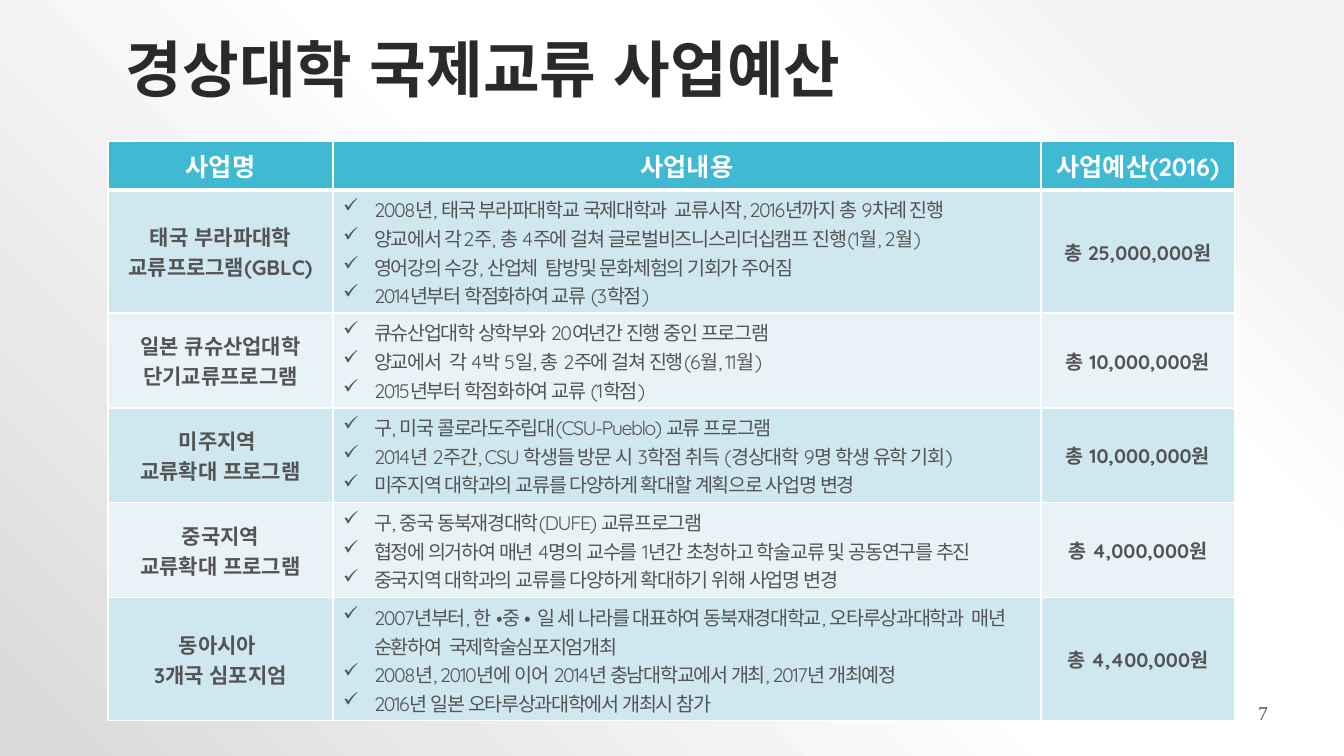
from lxml import etree
from pptx import Presentation
from pptx import util as u
from pptx.dml.color import RGBColor
from pptx.enum import text
from pptx.oxml import parse_xml
from pptx.oxml.ns import nsdecls, qn

TITLE = "경상대학 국제교류 사업예산"
PAGE_NUMBER = "7"
HEADERS = ["사업명", "사업내용", "사업예산(2016)"]
# name lines, detail lines (a tuple is one line in several spans), budget
PROGRAMS = [
    (["태국 부라파대학", "교류프로그램(GBLC)"],
     ["2008년, 태국 부라파대학교 국제대학과  교류시작, 2016년까지 총 9차례 진행",
      "양교에서 각2주, 총 4주에 걸쳐 글로벌비즈니스리더십캠프 진행(1월, 2월)",
      "영어강의 수강, 산업체  탐방및 문화체험의 기회가 주어짐",
      "2014년부터 학점화하여 교류 (3학점)"],
     "총 25,000,000원"),
    (["일본 큐슈산업대학", "단기교류프로그램"],
     ["큐슈산업대학 상학부와 20여년간 진행 중인 프로그램",
      "양교에서  각 4박 5일, 총 2주에 걸쳐 진행(6월, 11월)",
      "2015년부터 학점화하여 교류 (1학점)"],
     "총 10,000,000원"),
    (["미주지역 ", "교류확대 프로그램"],
     ["구, 미국 콜로라도주립대(CSU-Pueblo) 교류 프로그램",
      "2014년 2주간, CSU 학생들 방문 시 3학점 취득 (경상대학 9명 학생 유학 기회)",
      "미주지역 대학과의 교류를 다양하게 확대할 계획으로 사업명 변경"],
     "총 10,000,000원"),
    (["중국지역", "교류확대 프로그램"],
     ["구, 중국 동북재경대학(DUFE) 교류프로그램",
      "협정에 의거하여 매년 4명의 교수를 1년간 초청하고 학술교류 및 공동연구를 추진",
      "중국지역 대학과의 교류를 다양하게 확대하기 위해 사업명 변경"],
     "총 4,000,000원"),
    (["동아시아 ", "3개국 심포지엄"],
     [("2007년부터, 한 ", "•", "중 ", "• ",
       "일 세 나라를 대표하여 동북재경대학교, 오타루상과대학과  매년 순환하여  국제학술심포지엄개최"),
      "2008년, 2010년에 이어 2014년 충남대학교에서 개최, 2017년 개최예정",
      "2016년 일본 오타루상과대학에서 개최시 참가"],
     "총 4,400,000원"),
]

THEME = {
    "korean": "Noto Sans CJK KR", "latin": "Quicksand", "serif": "Times New Roman",
    "title": "2A2A2A", "ink": "545454", "white": "FFFFFF",
    "header": "40BAD2", "bands": ["CFE7EE", "E8F3F7"],
    "backdrop": [(10, "F2F2F2"), (28, "FFFFFF"), (48, "FFFFFF"), (100, "D9D9D9")],
    "title_size": 44, "header_size": 18, "name_size": 15, "body_size": 14,
}

PX = 914400 / 100.8
TITLE_BOX = (116, 0, 1076, 146)
NUMBER_BOX = (1068, 696, 210, 50)
TABLE_LEFT, TABLE_TOP = 108, 141
COLUMNS = [225, 708, 194]
ROWS = [49, 123, 95, 95, 95, 123]
INDENT = 31


def px(length):
    return u.Emu(round(length * PX))


def write(frame, lines, size, color, font=THEME["latin"], bold=False,
          align=text.PP_ALIGN.LEFT, spacing=None, tracking=0, check=False):
    """Fill a text frame, one paragraph a line; tracking is in points."""
    for index, line in enumerate(lines):
        para = frame.paragraphs[0] if index == 0 else frame.add_paragraph()
        para.alignment = align
        if spacing:
            para.line_spacing = spacing
        if check:
            props = para._p.get_or_add_pPr()
            props.set("marL", str(px(INDENT)))
            props.set("indent", str(-px(INDENT)))
            etree.SubElement(props, qn("a:buChar")).set("char", "✓")
        for part in (line if isinstance(line, tuple) else (line,)):
            dot = part.startswith("•")
            span = para.add_run()
            span.text = part
            span.font.size = u.Pt(size)
            span.font.bold = bold
            span.font.color.rgb = RGBColor.from_string(color)
            span.font.name = THEME["korean"] if dot else font
            props = span._r.get_or_add_rPr()
            props.set("lang", "ko-KR")
            if tracking and not dot:
                props.set("spc", str(tracking * 100))
            etree.SubElement(props, qn("a:ea")).set("typeface", THEME["korean"])


def add_text(page, place, lines, anchor=text.MSO_ANCHOR.TOP, **style):
    box = page.shapes.add_textbox(*map(px, place))
    box.text_frame.word_wrap = True
    box.text_frame.vertical_anchor = anchor
    write(box.text_frame, lines, **style)


def style_cell(cell, fill, bottom=1, top=1):
    """Set the fill, the white borders (widths in points) and the anchor."""
    cell.vertical_anchor = text.MSO_ANCHOR.MIDDLE
    cell.fill.solid()
    cell.fill.fore_color.rgb = RGBColor.from_string(fill)
    props = cell._tc.get_or_add_tcPr()
    for index, (side, width) in enumerate(zip("LRTB", (1, 1, top, bottom))):
        props.insert(index, parse_xml(
            f'<a:ln{side} {nsdecls("a")} w="{u.Pt(width)}"><a:solidFill>'
            f'<a:srgbClr val="{THEME["white"]}"/></a:solidFill></a:ln{side}>'))


def paint_backdrop(page):
    """Radial gradient centred on the top right corner."""
    stops = "".join(f'<a:gs pos="{at * 1000}"><a:srgbClr val="{color}"/></a:gs>'
                    for at, color in THEME["backdrop"])
    page.background.fill.solid()
    props = page._element.cSld.find(qn("p:bg")).find(qn("p:bgPr"))
    props.replace(props[0], parse_xml(
        f'<a:gradFill {nsdecls("a")} rotWithShape="1"><a:gsLst>{stops}</a:gsLst>'
        '<a:path path="circle"><a:fillToRect l="100000" b="100000"/></a:path></a:gradFill>'))


def add_budget_table(page):
    frame = page.shapes.add_table(len(ROWS), len(COLUMNS), px(TABLE_LEFT), px(TABLE_TOP),
                                  px(sum(COLUMNS)), px(sum(ROWS)))
    table = frame.table
    for column, width in zip(table.columns, COLUMNS):
        column.width = px(width)
    for row, height in zip(table.rows, ROWS):
        row.height = px(height)

    centred = {"bold": True, "align": text.PP_ALIGN.CENTER}
    for column, label in enumerate(HEADERS):
        cell = table.cell(0, column)
        style_cell(cell, THEME["header"], bottom=3)
        write(cell.text_frame, [label], THEME["header_size"], THEME["white"], **centred)

    for row, (name, details, budget) in enumerate(PROGRAMS, start=1):
        columns = [
            (name, THEME["name_size"], centred),
            (details, THEME["body_size"], {"tracking": -1, "check": True}),
            ([budget], THEME["body_size"], centred),
        ]
        for column, (lines, size, style) in enumerate(columns):
            cell = table.cell(row, column)
            style_cell(cell, THEME["bands"][(row - 1) % 2], top=3 if row == 1 else 1)
            write(cell.text_frame, lines, size, THEME["ink"], **style)


def main():
    deck = Presentation()
    deck.slide_width, deck.slide_height = px(1344), px(756)
    page = deck.slides.add_slide(deck.slide_layouts[6])
    paint_backdrop(page)
    add_text(page, TITLE_BOX, [TITLE], anchor=text.MSO_ANCHOR.MIDDLE, font=THEME["korean"],
             size=THEME["title_size"], color=THEME["title"], bold=True, spacing=0.9)
    add_budget_table(page)
    add_text(page, NUMBER_BOX, [PAGE_NUMBER], font=THEME["serif"], size=THEME["body_size"],
             color=THEME["ink"], align=text.PP_ALIGN.RIGHT)
    deck.save("out.pptx")


if __name__ == "__main__":
    main()
